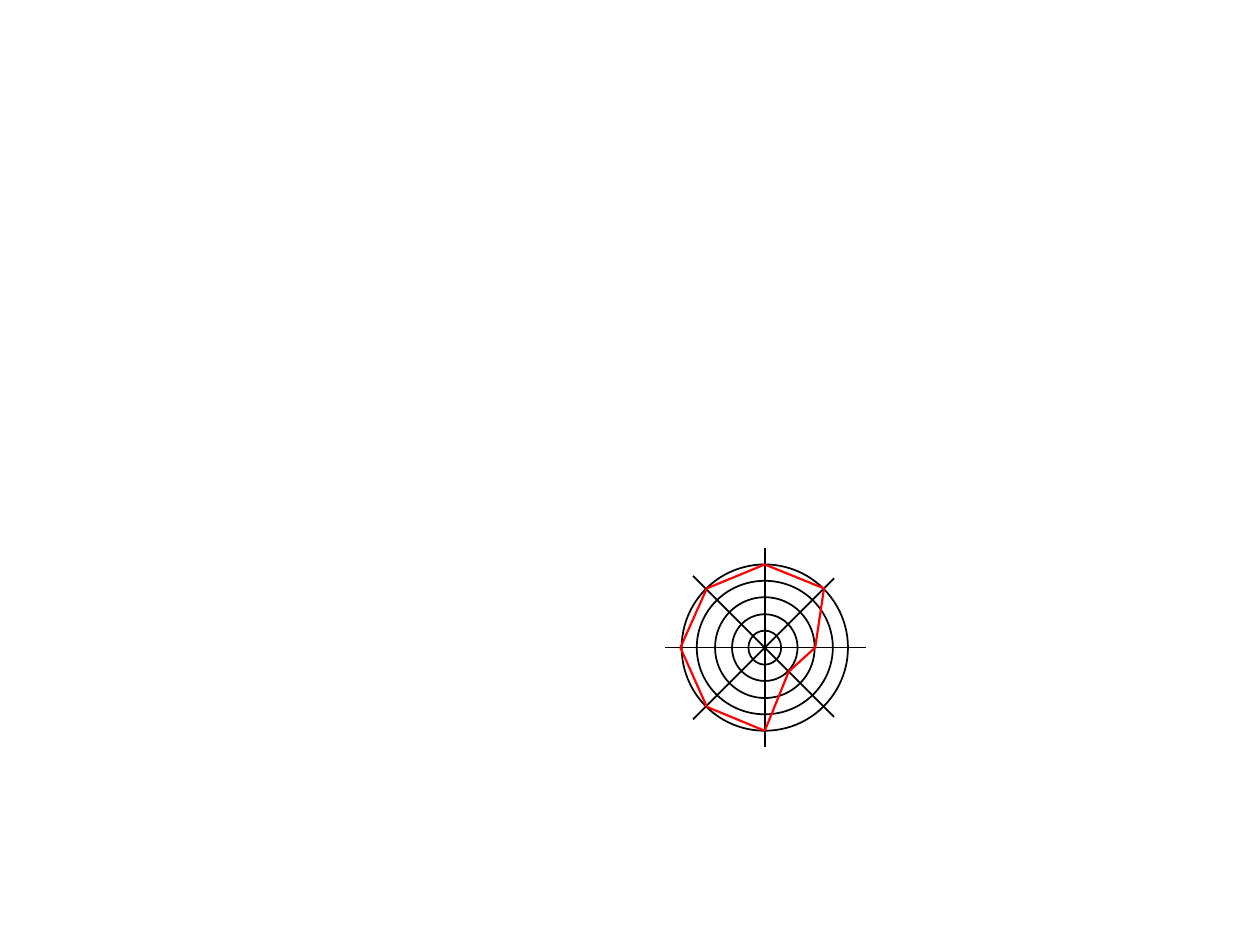
from lxml import etree
from pptx import Presentation
from pptx import util as u
from pptx.dml.color import RGBColor
from pptx.enum import shapes as s
from pptx.oxml import ns

HUES = {"grid": "000000", "score": "FF0000"}
MID = (6.07, 5.14)
RINGS = [(1.32, 1.32), (1.08, 1.06), (0.79, 0.8), (0.52, 0.53), (0.26, 0.27)]
AXES = [
    ((6.07, 4.35), (6.07, 5.93)),
    ((6.87, 5.14), (5.28, 5.14)),
    ((6.62, 5.69), (5.5, 4.57)),
    ((5.5, 5.71), (6.62, 4.59)),
]
SCORES = [
    (6.07, 4.48), (6.54, 4.67), (6.47, 5.14), (6.26, 5.33),
    (6.07, 5.8), (5.61, 5.61), (5.4, 5.14), (5.61, 4.67),
]


class Pen:
    """Hold the line style and the current slide, and draw on it."""

    def __init__(self, slide):
        self.slide = slide
        self.hues = HUES
        self.wide = {"grid": 1, "score": 1.25}

    def group(self):
        return self.slide.shapes.add_group_shape().shapes

    def stroke(self, item, kind):
        item.line.color.rgb = RGBColor.from_string(self.hues[kind])
        item.line.width = u.Pt(self.wide[kind])

    def ring(self, home, wide, high):
        left, top = MID[0] - wide / 2, MID[1] - high / 2
        box = [u.Inches(n) for n in (left, top, wide, high)]
        item = home.add_shape(s.MSO_SHAPE.OVAL, *box)
        item.shadow.inherit = False
        item.fill.background()
        self.stroke(item, "grid")

    def line(self, home, start, end, kind):
        ends = [u.Inches(n) for n in (*start, *end)]
        item = home.add_connector(s.MSO_CONNECTOR.STRAIGHT, *ends)
        self.stroke(item, kind)
        props = item._element.spPr
        etree.SubElement(props, ns.qn("a:effectLst"))


def main():
    deck = Presentation()
    deck.slide_width, deck.slide_height = u.Inches(10), u.Inches(7.5)
    pen = Pen(deck.slides.add_slide(deck.slide_layouts[6]))
    grid = pen.group()
    for wide, high in RINGS:
        pen.ring(grid, wide, high)
    for start, end in AXES:
        pen.line(grid, start, end, "grid")
    for start, end in zip(SCORES, SCORES[1:] + SCORES[:1]):
        pen.line(pen.slide.shapes, start, end, "score")
    deck.save("out.pptx")


if __name__ == "__main__":
    main()
